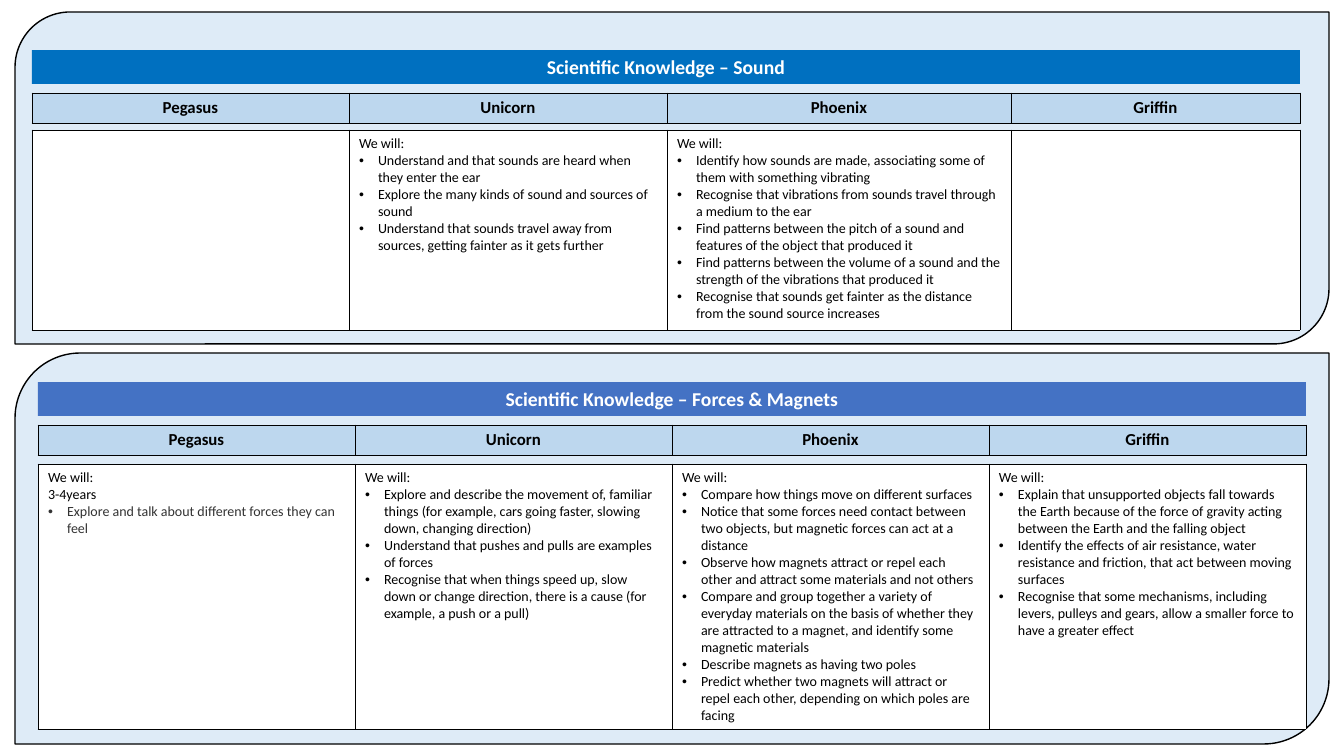
from lxml import etree
from pptx import Presentation
from pptx import util as u
from pptx.dml.color import RGBColor
from pptx.enum import shapes, text
from pptx.oxml.ns import qn

BLACK = RGBColor(0x00, 0x00, 0x00)
WHITE = RGBColor(0xFF, 0xFF, 0xFF)
GREY = RGBColor(0x33, 0x33, 0x33)
PALE_BLUE = RGBColor(0xDE, 0xEB, 0xF7)
HEADER_BLUE = RGBColor(0xBD, 0xD7, 0xEE)
SOUND_BLUE = RGBColor(0x00, 0x70, 0xC0)
FORCES_BLUE = RGBColor(0x44, 0x72, 0xC4)

CLASSES = ["Pegasus", "Unicorn", "Phoenix", "Griffin"]

# Each class has its introductory lines, its bullets and the bullet colour.
EMPTY = ([], [], BLACK)
SOUND = [
    EMPTY,
    (["We will:"], [
        "Understand and that sounds are heard when they enter the ear",
        "Explore the many kinds of sound and sources of sound",
        "Understand that sounds travel away from sources, getting fainter as it gets further",
    ], BLACK),
    (["We will:"], [
        "Identify how sounds are made, associating some of them with something vibrating",
        "Recognise that vibrations from sounds travel through a medium to the ear",
        "Find patterns between the pitch of a sound and features of the object that produced it",
        "Find patterns between the volume of a sound and the strength of the vibrations that produced it",
        "Recognise that sounds get fainter as the distance from the sound source increases",
    ], BLACK),
    EMPTY,
]
FORCES = [
    (["We will:", "3-4years"], [
        "Explore and talk about different forces they can feel",
    ], GREY),
    (["We will:"], [
        "Explore and describe the movement of, familiar things (for example, cars going faster, "
        "slowing down, changing direction)",
        "Understand that pushes and pulls are examples of forces",
        "Recognise that when things speed up, slow down or change direction, there is a cause "
        "(for example, a push or a pull)",
    ], BLACK),
    (["We will:"], [
        "Compare how things move on different surfaces",
        "Notice that some forces need contact between two objects, but magnetic forces can act at a distance",
        "Observe how magnets attract or repel each other and attract some materials and not others",
        "Compare and group together a variety of everyday materials on the basis of whether they are "
        "attracted to a magnet, and identify some magnetic materials",
        "Describe magnets as having two poles",
        "Predict whether two magnets will attract or repel each other, depending on which poles are facing",
    ], BLACK),
    (["We will:"], [
        "Explain that unsupported objects fall towards the Earth because of the force of gravity acting "
        "between the Earth and the falling object",
        "Identify the effects of air resistance, water resistance and friction, that act between moving surfaces",
        "Recognise that some mechanisms, including levers, pulleys and gears, allow a smaller force to "
        "have a greater effect",
    ], BLACK),
]

# Lengths are in px; tops run panel, banner, header row, knowledge row.
TOPICS = [
    dict(title="Scientific Knowledge – Sound", colour=SOUND_BLUE, knowledge=SOUND,
         left=32, tops=(12, 50, 93, 130), panel_height=332, knowledge_height=200,
         widths=(317, 318, 344, 289)),
    dict(title="Scientific Knowledge – Forces & Magnets", colour=FORCES_BLUE, knowledge=FORCES,
         left=38, tops=(353, 382, 425, 464), panel_height=391, knowledge_height=265,
         widths=(317, 317, 317, 317)),
]
PANEL_LEFT, PANEL_WIDTH = 15, 1314
BANNER_HEIGHT, HEADER_HEIGHT = 34, 30
BULLET_INDENT = 19


def px(length):
    return u.Emu(round(length * 914400 / 100.8))


def write(frame, lines, size=10, colour=BLACK, bold=False, align=text.PP_ALIGN.LEFT, bullet=False):
    """Add lines to the frame, filling its first paragraph if that is still empty."""
    for line in lines:
        first = frame.paragraphs[0]
        paragraph = frame.add_paragraph() if first.runs else first
        paragraph.alignment = align
        if bullet:
            properties = paragraph._p.get_or_add_pPr()
            properties.set("marL", str(px(BULLET_INDENT)))
            properties.set("indent", str(-px(BULLET_INDENT)))
            etree.SubElement(properties, qn("a:buFont"), typeface="Arial")
            etree.SubElement(properties, qn("a:buChar"), char="•")
        run = paragraph.add_run()
        run.text = line
        run.font.name = "Calibri"
        run.font.size = u.Pt(size)
        run.font.bold = bold
        run.font.color.rgb = colour


def add_block(slide, kind, left, top, width, height, fill):
    block = slide.shapes.add_shape(kind, px(left), px(top), px(width), px(height))
    block.shadow.inherit = False
    block.fill.solid()
    block.fill.fore_color.rgb = fill
    block.line.fill.background()
    return block


def style_cell(cell, fill):
    """Give the cell thin black borders and a solid fill."""
    properties = cell._tc.get_or_add_tcPr()
    for side in ("a:lnL", "a:lnR", "a:lnT", "a:lnB"):
        border = etree.SubElement(properties, qn(side), w=str(u.Pt(0.5)))
        solid = etree.SubElement(border, qn("a:solidFill"))
        etree.SubElement(solid, qn("a:srgbClr"), val=str(BLACK))
    cell.fill.solid()
    cell.fill.fore_color.rgb = fill


def add_row(slide, left, top, widths, height, fill):
    """Add a one-row table and return its cells."""
    table = slide.shapes.add_table(1, len(widths), px(left), px(top), px(sum(widths)), px(height)).table
    table.first_row = table.horz_banding = False
    for column, width in zip(table.columns, widths):
        column.width = px(width)
    cells = list(table.rows[0].cells)
    for cell in cells:
        style_cell(cell, fill)
    return cells


def add_topic(slide, title, colour, knowledge, left, tops, panel_height, knowledge_height, widths):
    panel_top, banner_top, header_top, knowledge_top = tops
    panel = add_block(slide, shapes.MSO_SHAPE.ROUND_2_DIAG_RECTANGLE,
                      PANEL_LEFT, panel_top, PANEL_WIDTH, panel_height, PALE_BLUE)
    panel.line.color.rgb = BLACK
    panel.line.width = u.Pt(1)

    banner = add_block(slide, shapes.MSO_SHAPE.RECTANGLE,
                       left, banner_top, sum(widths), BANNER_HEIGHT, colour)
    write(banner.text_frame, [title], size=14, colour=WHITE, bold=True, align=text.PP_ALIGN.CENTER)

    headers = add_row(slide, left, header_top, widths, HEADER_HEIGHT, HEADER_BLUE)
    for cell, name in zip(headers, CLASSES):
        write(cell.text_frame, [name], size=12, bold=True, align=text.PP_ALIGN.CENTER)

    cells = add_row(slide, left, knowledge_top, widths, knowledge_height, WHITE)
    for cell, (intro, bullets, bullet_colour) in zip(cells, knowledge):
        write(cell.text_frame, intro)
        write(cell.text_frame, bullets, colour=bullet_colour, bullet=True)


def main():
    deck = Presentation()
    deck.slide_width, deck.slide_height = px(1344), px(756)
    slide = deck.slides.add_slide(deck.slide_layouts[6])
    for topic in TOPICS:
        add_topic(slide, **topic)
    deck.save("out.pptx")


if __name__ == "__main__":
    main()
